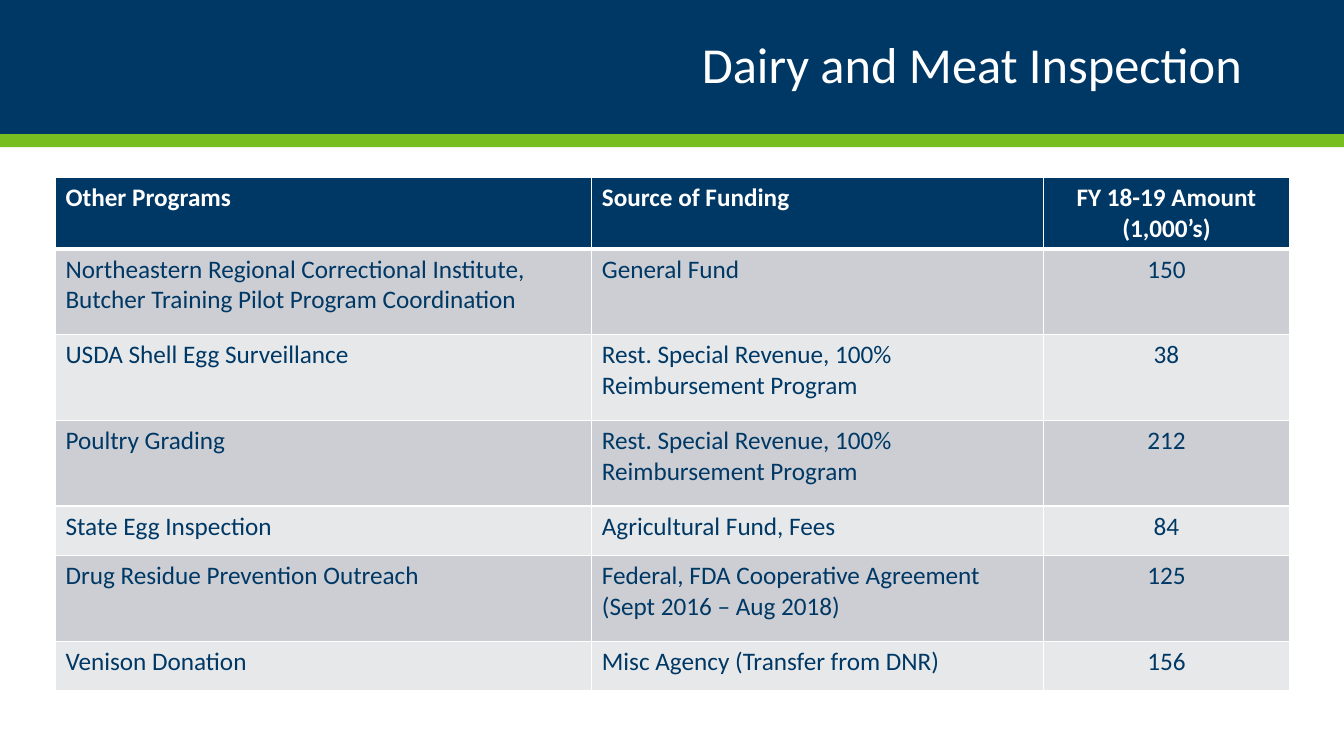
import pptx
import pptx.util
import pptx.dml.color
import pptx.enum.shapes
import pptx.enum.text
import pptx.oxml
import pptx.oxml.ns

Inches = pptx.util.Inches
Pt = pptx.util.Pt
ALIGN = pptx.enum.text.PP_ALIGN
ANCHOR = pptx.enum.text.MSO_ANCHOR
COLORS = {
    "navy": "003865",
    "green": "78BE21",
    "white": "FFFFFF",
    "dark": "CCCED3",
    "light": "E7E8EA",
}


def paint(fill, color):
    fill.solid()
    fill.fore_color.rgb = pptx.dml.color.RGBColor.from_string(COLORS[color])


def write(frame, text, size=18, color="navy", bold=False, align=ALIGN.LEFT, space=None):
    para = frame.paragraphs[0]
    para.alignment = align
    para.line_spacing = space
    run = para.add_run()
    run.text = text
    run.font.name = "Calibri"
    run.font.size = Pt(size)
    run.font.bold = bold
    paint(run.font.fill, color)


deck = pptx.Presentation()
deck.slide_width = Inches(13.33)
deck.slide_height = Inches(7.5)
slide = deck.slides.add_slide(deck.slide_layouts[5])

for top, height, color in [(0, 1.33, "navy"), (1.33, 0.13, "green")]:
    band = slide.shapes.add_shape(
        pptx.enum.shapes.MSO_SHAPE.RECTANGLE,
        0, Inches(top), deck.slide_width, Inches(height),
    )
    band.shadow.inherit = False
    paint(band.fill, color)
    band.line.fill.background()

title = slide.shapes.title
title.left, title.top = Inches(0.92), Inches(0.17)
title.width, title.height = Inches(11.5), Inches(1)
title.text_frame.vertical_anchor = ANCHOR.MIDDLE
write(title.text_frame, "Dairy and Meat Inspection", size=36, color="white",
      align=ALIGN.RIGHT, space=0.9)
title.element.getparent().append(title.element)

rows = [
    (0.49, "Other Programs", "Source of Funding", "FY 18-19 Amount (1,000’s)"),
    (0.85, "Northeastern Regional Correctional Institute, Butcher Training Pilot Program Coordination",
     "General Fund", "150"),
    (0.85, "USDA Shell Egg Surveillance",
     "Rest. Special Revenue, 100% Reimbursement Program", "38"),
    (0.85, "Poultry Grading",
     "Rest. Special Revenue, 100% Reimbursement Program", "212"),
    (0.49, "State Egg Inspection", "Agricultural Fund, Fees", "84"),
    (0.85, "Drug Residue Prevention Outreach",
     "Federal, FDA Cooperative Agreement (Sept 2016 – Aug 2018)", "125"),
    (0.49, "Venison Donation", "Misc Agency (Transfer from DNR)", "156"),
]
widths = [5.32, 4.48, 2.44]
table = slide.shapes.add_table(
    len(rows), len(widths), Inches(0.55), Inches(1.76),
    Inches(sum(widths)), Inches(sum(row[0] for row in rows)),
).table
for col, width in zip(table.columns, widths):
    col.width = Inches(width)

for i, (height, *texts) in enumerate(rows):
    table.rows[i].height = Inches(height)
    head = i == 0
    shade = "navy" if head else "dark" if i % 2 else "light"
    for j, text in enumerate(texts):
        cell = table.cell(i, j)
        props = cell._tc.get_or_add_tcPr()
        for side in "LRTB":
            thick = (i, side) in [(0, "B"), (1, "T")]
            props.append(pptx.oxml.parse_xml(
                f'<a:ln{side} {pptx.oxml.ns.nsdecls("a")} w="{Pt(3 if thick else 1)}">'
                f'<a:solidFill><a:srgbClr val="{COLORS["white"]}"/></a:solidFill>'
                f'</a:ln{side}>'
            ))
        paint(cell.fill, shade)
        write(cell.text_frame, text, color="white" if head else "navy", bold=head,
              align=ALIGN.CENTER if j == 2 else ALIGN.LEFT)

deck.save("out.pptx")
